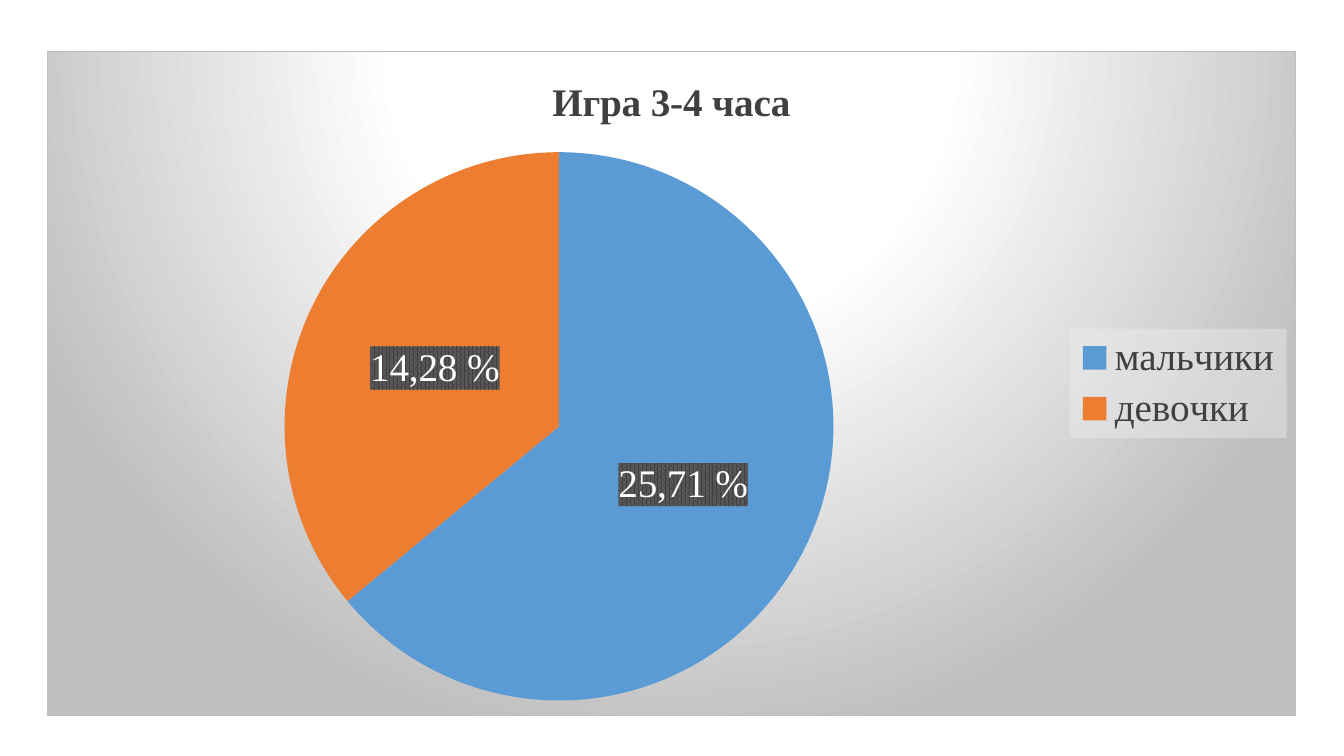
"""Build a slide with a pie chart of playing time for boys and girls."""
from dataclasses import dataclass

from lxml import etree
from pptx import Presentation
from pptx.chart.chart import Chart
from pptx.chart.data import CategoryChartData
from pptx.chart.point import Point
from pptx.dml.color import RGBColor
from pptx.enum.chart import XL_CHART_TYPE, XL_LABEL_POSITION, XL_LEGEND_POSITION
from pptx.oxml import parse_xml
from pptx.oxml.ns import nsdecls, qn
from pptx.slide import Slide
from pptx.text.text import Font, TextFrame
from pptx.util import Inches, Pt

PIE = XL_CHART_TYPE.PIE
CENTER = XL_LABEL_POSITION.CENTER
RIGHT = XL_LEGEND_POSITION.RIGHT

WIDTH = Inches(13.33)
HEIGHT = Inches(7.5)
FONT = "Times New Roman"
FONT_SIZE = 28
TITLE = "Игра 3-4 часа"
COLORS = {
    "boys": "5B9BD5",
    "girls": "ED7D31",
    "text": "404040",
    "label_text": "FFFFFF",
    "label_front": "404040",
    "label_back": "595959",
    "center": "FFFFFF",
    "edge": "BFBFBF",
    "legend": "F2F2F2",
}


@dataclass(frozen=True)
class Slice:
    name: str
    value: int
    label: str
    color: str


@dataclass(frozen=True)
class Area:
    """A rectangle given in shares of its container."""

    x: float
    y: float
    w: float
    h: float


SLICES = [
    Slice("мальчики", 64, "25,71 %", "boys"),
    Slice("девочки", 36, "14,28 %", "girls"),
]
CHART_AREA = Area(0.035, 0.067, 0.929, 0.88)
PIE_AREA = Area(0.19, 0.15, 0.44, 0.83)


def solid_color(name: str, alpha: int = 100) -> str:
    return f'<a:srgbClr val="{COLORS[name]}"><a:alpha val="{alpha * 1000}"/></a:srgbClr>'


def shape_properties(content: str) -> etree.ElementBase:
    return parse_xml(f'<c:spPr {nsdecls("c", "a")}>{content}</c:spPr>')


def format_font(font: Font, *, color: str = "text", size: int = FONT_SIZE, bold: bool = False) -> None:
    font.name = FONT
    font.size = Pt(size)
    font.bold = bold
    font.color.rgb = RGBColor.from_string(COLORS[color])


def write_text(frame: TextFrame, text: str, *, color: str = "text", bold: bool = False) -> None:
    run = frame.paragraphs[0].add_run()
    run.text = text
    format_font(run.font, color=color, bold=bold)


def paint_background(chart: Chart) -> None:
    stops = "".join(
        f'<a:gs pos="{share * 1000}">{solid_color(name)}</a:gs>'
        for share, name in ((0, "center"), (39, "center"), (100, "edge"))
    )
    properties = shape_properties(
        f'<a:gradFill><a:gsLst>{stops}</a:gsLst><a:path path="circle">'
        '<a:fillToRect l="50000" t="-80000" r="50000" b="180000"/></a:path></a:gradFill>'
        f'<a:ln w="{Pt(0.75)}"><a:solidFill>{solid_color("edge")}</a:solidFill></a:ln>'
    )
    chart.element.find(qn("c:chart")).addnext(properties)


def place_pie(chart: Chart, area: Area) -> None:
    modes = "".join(f'<c:{side}Mode val="edge"/>' for side in "xy")
    sizes = "".join(f'<c:{key} val="{getattr(area, key)}"/>' for key in "xywh")
    layout = parse_xml(
        f'<c:layout {nsdecls("c")}><c:manualLayout><c:layoutTarget val="inner"/>'
        f"{modes}{sizes}</c:manualLayout></c:layout>"
    )
    plot_area = next(chart.element.iter(qn("c:plotArea")))
    for previous in plot_area.findall(qn("c:layout")):
        plot_area.remove(previous)
    plot_area.insert(0, layout)


def add_legend(chart: Chart) -> None:
    chart.has_legend = True
    chart.legend.position = RIGHT
    chart.legend.include_in_layout = False
    format_font(chart.legend.font)
    legend = next(chart.element.iter(qn("c:legend")))
    fill = shape_properties(f'<a:solidFill>{solid_color("legend", 39)}</a:solidFill>')
    legend.find(qn("c:txPr")).addprevious(fill)


def format_slice(point: Point, item: Slice) -> None:
    point.format.fill.solid()
    point.format.fill.fore_color.rgb = RGBColor.from_string(COLORS[item.color])
    write_text(point.data_label.text_frame, item.label, color="label_text")
    point.data_label.position = CENTER


def paint_labels(chart: Chart) -> None:
    for label in chart.element.iter(qn("c:dLbl")):
        for previous in label.findall(qn("c:spPr")):
            label.remove(previous)
        label.find(qn("c:tx")).addnext(shape_properties(
            f'<a:pattFill prst="pct75"><a:fgClr>{solid_color("label_front")}</a:fgClr>'
            f'<a:bgClr>{solid_color("label_back")}</a:bgClr></a:pattFill>'
        ))


def add_pie_chart(slide: Slide, area: Area) -> None:
    data = CategoryChartData()
    data.categories = [item.name for item in SLICES]
    data.add_series(TITLE, [item.value for item in SLICES])
    frame = slide.shapes.add_chart(
        PIE, round(area.x * WIDTH), round(area.y * HEIGHT),
        round(area.w * WIDTH), round(area.h * HEIGHT), data,
    )
    chart = frame.chart
    format_font(chart.font)
    chart.has_title = True
    write_text(chart.chart_title.text_frame, TITLE, bold=True)
    plot = chart.plots[0]
    plot.vary_by_categories = True
    series = plot.series[0]
    for index, item in enumerate(SLICES):
        format_slice(series.points[index], item)
    labels = series.data_labels
    labels.show_percentage = True
    labels.show_value = False
    labels.position = CENTER
    format_font(labels.font, color="label_text", bold=True)
    paint_labels(chart)
    add_legend(chart)
    place_pie(chart, PIE_AREA)
    paint_background(chart)


def main() -> None:
    presentation = Presentation()
    presentation.slide_width = WIDTH
    presentation.slide_height = HEIGHT
    slide = presentation.slides.add_slide(presentation.slide_layouts[6])
    add_pie_chart(slide, CHART_AREA)
    presentation.save("out.pptx")


if __name__ == "__main__":
    main()
